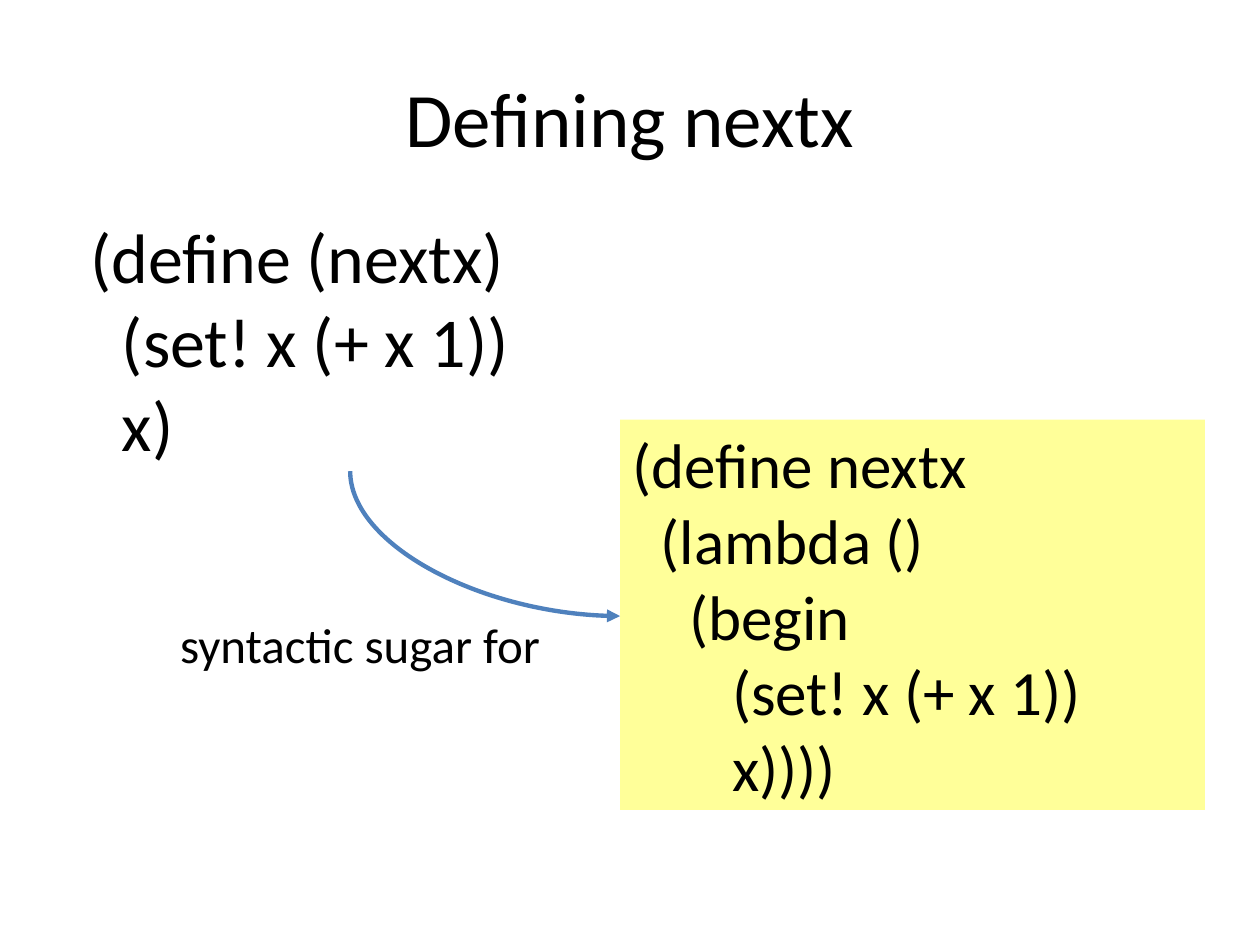
from lxml import etree
from pptx import Presentation
from pptx.dml.color import RGBColor
from pptx.enum import shapes, text
from pptx.oxml.ns import qn
from pptx.util import Cm, Pt

BLACK = RGBColor(0x00, 0x00, 0x00)
YELLOW = RGBColor(0xFF, 0xFF, 0x99)
BLUE = RGBColor(0x4F, 0x81, 0xBD)
FONT = "Calibri"
SPACE = 0.226  # width of a Calibri space, in ems

SUGAR = [(0, "(define (nextx)"), (2, "(set! x (+ x 1))"), (2, "x)")]
LAMBDA = [(0, "(define nextx"), (2, "(lambda ()"), (4, "(begin"),
          (7, "(set! x (+ x 1))"), (7, "x))))")]


def style(para, size):
    para.font.name = FONT
    para.font.size = Pt(size)
    para.font.color.rgb = BLACK


def add_title(slide, box, words):
    title = slide.shapes.title
    title.left, title.top, title.width, title.height = box
    frame = title.text_frame
    frame.text = words
    frame.vertical_anchor = text.MSO_ANCHOR.MIDDLE
    para = frame.paragraphs[0]
    para.alignment = text.PP_ALIGN.CENTER
    style(para, 44)


def add_lines(slide, box, lines, size, fill=None, wrap=True):
    """Stack (indent in spaces, words) lines in a box."""
    shape = slide.shapes.add_textbox(*box)
    if fill is not None:
        shape.fill.solid()
        shape.fill.fore_color.rgb = fill
    frame = shape.text_frame
    frame.word_wrap = wrap
    frame.auto_size = text.MSO_AUTO_SIZE.SHAPE_TO_FIT_TEXT
    for i, (indent, words) in enumerate(lines):
        para = frame.add_paragraph() if i else frame.paragraphs[0]
        para.text = words
        style(para, size)
        props = para._p.get_or_add_pPr()
        props.set("marL", str(Pt(indent * SPACE * size)))


def add_curve(slide, box):
    """Quarter curve that leaves the box's top left downward, with an arrow at its bottom right."""
    left, top, width, height = box
    midx, midy = left + width // 2, top + height // 2
    # The turned frame swaps width and height about the same centre.
    dx, dy = height // 2, width // 2
    line = slide.shapes.add_connector(
        shapes.MSO_CONNECTOR.CURVE, midx + dx, midy - dy, midx - dx, midy + dy)
    line.line.color.rgb = BLUE
    line.line.width = Pt(2.5)
    props = line._element.spPr
    props.find(qn("a:xfrm")).set("rot", str(270 * 60000))
    props.find(qn("a:prstGeom")).set("prst", "curvedConnector2")
    etree.SubElement(props.find(qn("a:ln")), qn("a:tailEnd"), type="triangle")
    etree.SubElement(props, qn("a:effectLst"))


def main():
    deck = Presentation()
    deck.slide_width, deck.slide_height = Cm(25.4), Cm(19.05)
    slide = deck.slides.add_slide(deck.slide_layouts[5])
    add_title(slide, (Cm(1.27), Cm(0.76), Cm(22.86), Cm(3.18)), "Defining nextx")
    add_lines(slide, (Cm(1.57), Cm(4.17), Cm(11), Cm(5.33)), SUGAR, 40)
    add_lines(slide, (Cm(12.5), Cm(8.46), Cm(11.79), Cm(7.87)), LAMBDA, 36, YELLOW)
    add_curve(slide, (Cm(7.06), Cm(9.5), Cm(5.44), Cm(2.92)))
    add_lines(slide, (Cm(3.38), Cm(12.27), Cm(7.85), Cm(1.45)),
              [(0, "syntactic sugar for")], 28, wrap=False)
    deck.save("out.pptx")


if __name__ == "__main__":
    main()
